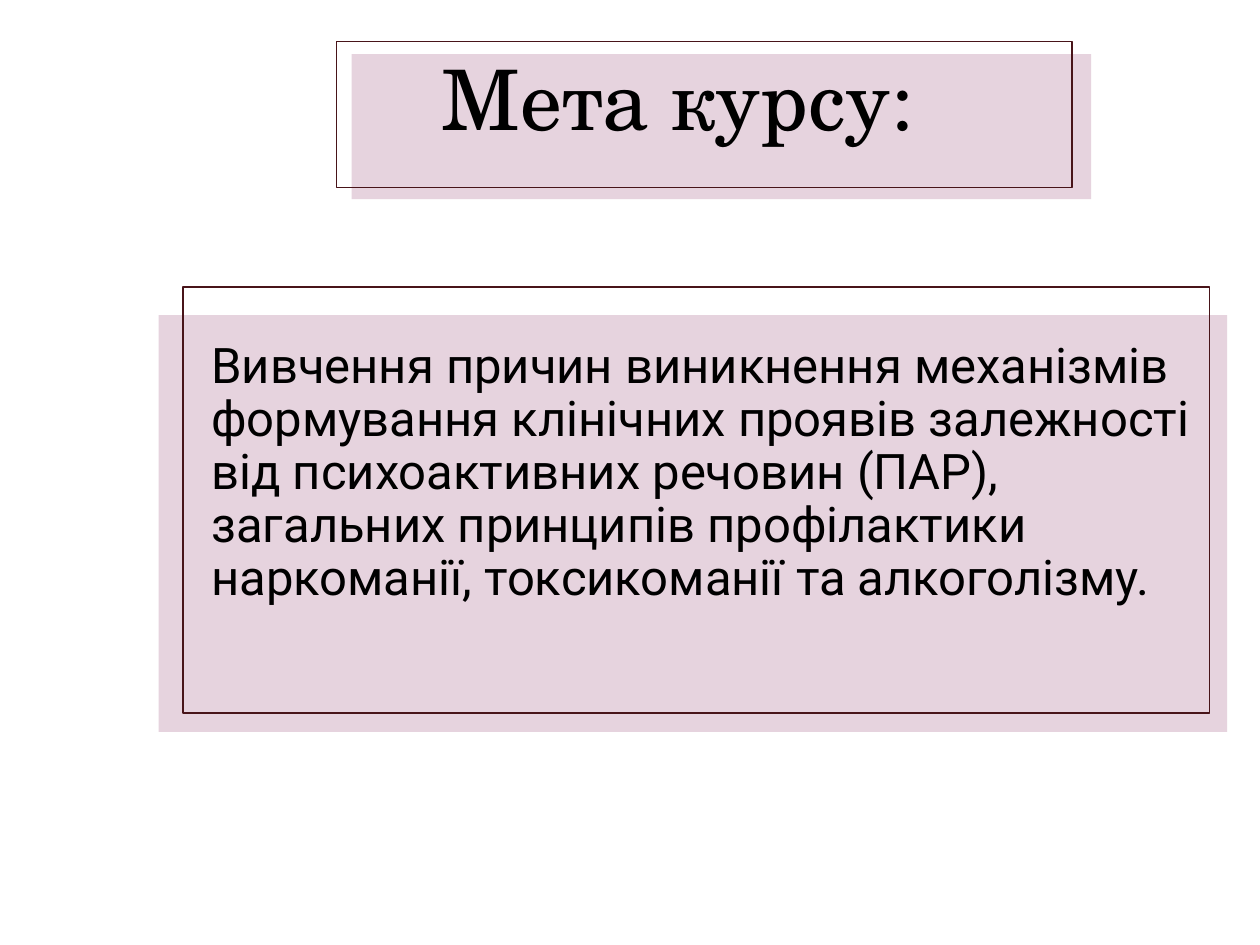
from dataclasses import dataclass
from typing import Optional

import pptx
import pptx.dml.color
import pptx.enum.shapes
import pptx.enum.text
import pptx.util

Inches = pptx.util.Inches
ALIGN = pptx.enum.text.PP_ALIGN
ANCHOR = pptx.enum.text.MSO_ANCHOR


@dataclass(frozen=True)
class Theme:
    panel: str = "E6D3DE"
    frame: str = "481419"
    text: str = "000000"
    title_font: str = "TeX Gyre Schola"
    body_font: str = "Roboto"
    title_size: float = 47.7
    body_size: float = 28
    frame_width: float = 1
    line_spacing: float = 0.9


@dataclass(frozen=True)
class Box:
    left: float
    top: float
    width: float
    height: float
    fill: Optional[str] = None
    line: Optional[str] = None

    def lengths(self):
        return [Inches(v) for v in (self.left, self.top, self.width, self.height)]


THEME = Theme()
PANELS = [
    Box(2.79, 0.43, 5.87, 1.15, fill=THEME.panel),
    Box(1.26, 2.5, 8.48, 3.31, fill=THEME.panel),
]
FRAMES = [
    Box(1.45, 2.28, 8.15, 3.38, line=THEME.frame),
    Box(2.67, 0.33, 5.84, 1.16, line=THEME.frame),
]
TITLE = Box(1.07, 0.54, 8.62, 1.06)
BODY = Box(1.58, 2.66, 8.02, 3.9)
TITLE_TEXT = "Мета курсу:"
BODY_TEXT = (
    "Вивчення причин виникнення механізмів формування клінічних проявів "
    "залежності від психоактивних речовин (ПАР), загальних принципів "
    "профілактики наркоманії, токсикоманії та алкоголізму."
)


def rgb(value: str) -> pptx.dml.color.RGBColor:
    return pptx.dml.color.RGBColor.from_string(value)


def draw_box(s, box: Box) -> None:
    sp = s.shapes.add_shape(pptx.enum.shapes.MSO_SHAPE.RECTANGLE, *box.lengths())
    sp.shadow.inherit = False
    if box.fill:
        sp.fill.solid()
        sp.fill.fore_color.rgb = rgb(box.fill)
    else:
        sp.fill.background()
    if box.line:
        sp.line.color.rgb = rgb(box.line)
        sp.line.width = pptx.util.Pt(THEME.frame_width)
    else:
        sp.line.fill.background()


def write_text(sp, text: str, *, font: str, size: float, align=ALIGN.LEFT,
               anchor=ANCHOR.TOP, bottom: float = 0.05) -> None:
    tf = sp.text_frame
    tf.word_wrap = True
    tf.auto_size = pptx.enum.text.MSO_AUTO_SIZE.NONE
    tf.vertical_anchor = anchor
    tf.margin_bottom = Inches(bottom)
    p = tf.paragraphs[0]
    p.alignment = align
    p.line_spacing = THEME.line_spacing
    p.space_before = pptx.util.Pt(0)
    r = p.add_run()
    r.text = text
    r.font.name = font
    r.font.size = pptx.util.Pt(size)
    r.font.color.rgb = rgb(THEME.text)


def main() -> None:
    prs = pptx.Presentation()
    prs.slide_width, prs.slide_height = Inches(10), Inches(7.5)
    s = prs.slides.add_slide(prs.slide_layouts.get_by_name("Title Only"))

    for panel in PANELS:
        draw_box(s, panel)

    title = s.shapes.title
    title.left, title.top, title.width, title.height = TITLE.lengths()
    # The deep bottom margin lifts the title to the upper part of its panel.
    write_text(title, TITLE_TEXT, font=THEME.title_font, size=THEME.title_size,
               align=ALIGN.CENTER, anchor=ANCHOR.MIDDLE, bottom=0.55)
    # Moving the title to the end of the tree puts it in front of the panels.
    s.shapes.element.append(title.element)

    body = s.shapes.add_textbox(*BODY.lengths())
    write_text(body, BODY_TEXT, font=THEME.body_font, size=THEME.body_size)

    for frame in FRAMES:
        draw_box(s, frame)

    prs.save("out.pptx")


if __name__ == "__main__":
    main()
